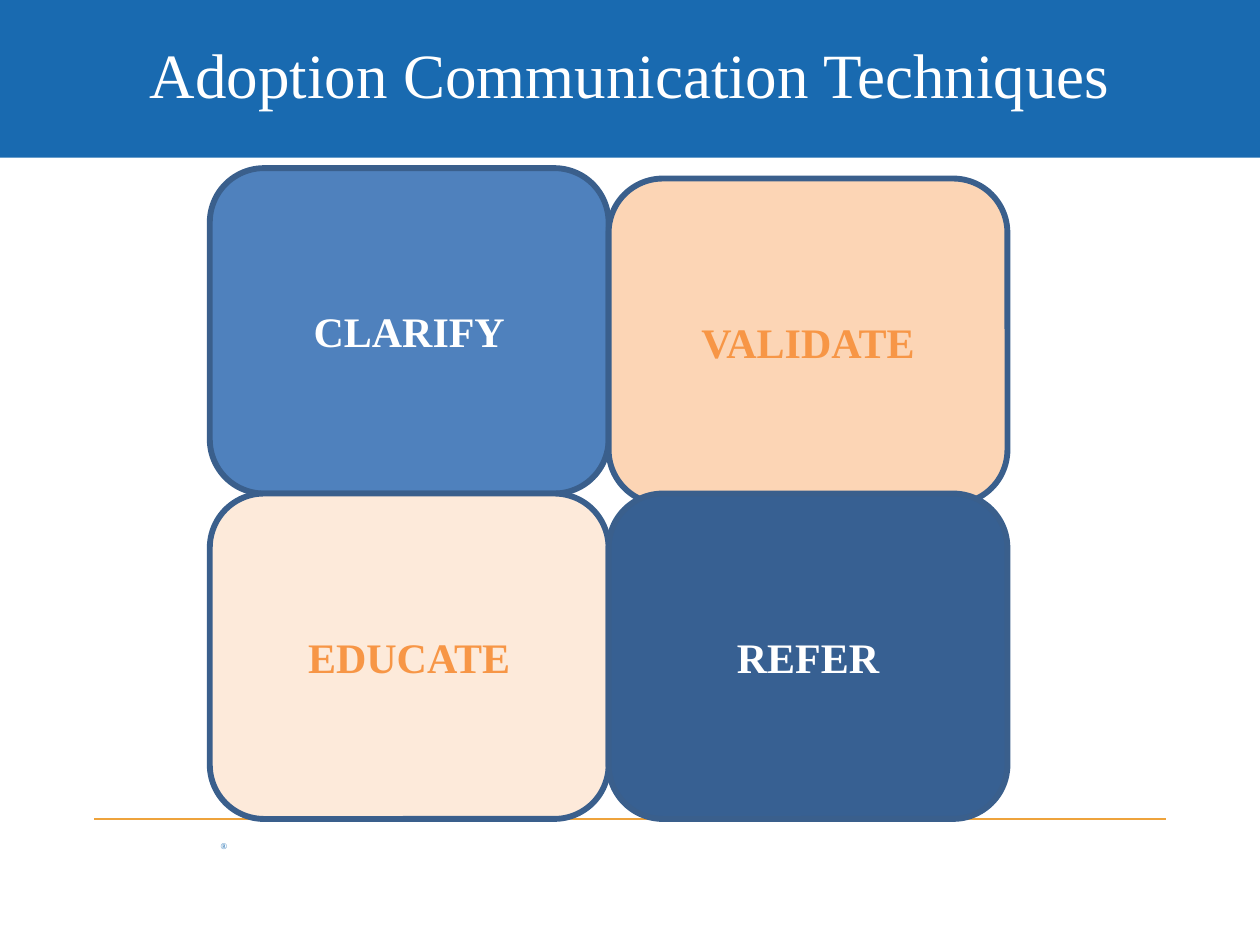
from dataclasses import dataclass

from lxml.etree import SubElement
from pptx import Presentation
from pptx.dml.color import RGBColor
from pptx.enum.shapes import MSO_CONNECTOR as Connector, MSO_SHAPE as Shape
from pptx.enum.text import MSO_ANCHOR as Anchor, MSO_AUTO_SIZE as AutoSize, PP_ALIGN as Align
from pptx.oxml.ns import qn
from pptx.slide import Slide
from pptx.text.text import TextFrame
from pptx.util import Cm, Pt


@dataclass(frozen=True)
class Theme:
    font: str = "Times New Roman"
    title_size: float = 36
    card_size: float = 24
    mark_size: float = 5
    card_border: float = 3.35
    rule_width: float = 0.75
    white: str = "FFFFFF"
    band: str = "196AB0"
    rule: str = "EEA33C"
    border: str = "3A5F8C"
    blue: str = "4F81BD"
    navy: str = "376092"
    peach: str = "FCD5B5"
    cream: str = "FDEADA"
    orange: str = "F79646"


@dataclass(frozen=True)
class Card:
    label: str
    left: float
    top: float
    fill: str
    text: str


THEME = Theme()
PAGE_WIDTH, PAGE_HEIGHT = 25.4, 19.05
BAND_HEIGHT = 3.18
CARD_WIDTH, CARD_HEIGHT = 8.04, 6.56
LEFT_COLUMN = 4.23
RIGHT_COLUMN = LEFT_COLUMN + CARD_WIDTH
LOWER_ROW = 9.95
RULE_MARGIN, RULE_TOP = 1.9, 16.51

CARDS = (
    Card("CLARIFY", LEFT_COLUMN, 3.39, THEME.blue, THEME.white),
    Card("VALIDATE", RIGHT_COLUMN, 3.6, THEME.peach, THEME.orange),
    Card("EDUCATE", LEFT_COLUMN, LOWER_ROW, THEME.cream, THEME.orange),
    Card("REFER", RIGHT_COLUMN, LOWER_ROW, THEME.navy, THEME.white),
)


def write(frame: TextFrame, text: str, size: float, color: str,
          bold: bool = False, align: Align = Align.CENTER) -> None:
    frame.text = text
    frame.word_wrap = True
    frame.vertical_anchor = Anchor.MIDDLE
    para = frame.paragraphs[0]
    para.alignment = align
    font = para.runs[0].font
    font.name, font.size, font.bold = THEME.font, Pt(size), bold
    font.color.rgb = RGBColor.from_string(color)


def draw_band(slide: Slide) -> None:
    band = slide.shapes.add_shape(Shape.RECTANGLE, 0, 0, Cm(PAGE_WIDTH), Cm(BAND_HEIGHT))
    band.shadow.inherit = False
    band.fill.solid()
    band.fill.fore_color.rgb = RGBColor.from_string(THEME.band)
    band.line.fill.background()


def draw_title(slide: Slide, text: str) -> None:
    """Fill the title placeholder and bring it in front of the band."""
    title = slide.shapes.title
    title.left, title.top, title.width, title.height = Cm(1.27), Cm(0.21), Cm(22.86), Cm(2.54)
    write(title.text_frame, text, THEME.title_size, THEME.white)
    title.text_frame.auto_size = AutoSize.NONE
    slide.shapes.element.append(title.element)


def draw_rule(slide: Slide) -> None:
    rule = slide.shapes.add_connector(Connector.STRAIGHT, Cm(RULE_MARGIN), Cm(RULE_TOP),
                                      Cm(PAGE_WIDTH - RULE_MARGIN), Cm(RULE_TOP))
    rule.line.color.rgb = RGBColor.from_string(THEME.rule)
    rule.line.width = Pt(THEME.rule_width)
    SubElement(rule.element.spPr, qn("a:effectLst"))


def draw_registered_mark(slide: Slide) -> None:
    box = slide.shapes.add_textbox(Cm(4.45), Cm(16.94), Cm(0.64), Cm(0.2))
    frame = box.text_frame
    frame.margin_left = frame.margin_top = frame.margin_right = frame.margin_bottom = 0
    write(frame, "®", THEME.mark_size, THEME.band, align=Align.LEFT)
    frame.vertical_anchor = Anchor.TOP


def draw_card(slide: Slide, card: Card) -> None:
    box = slide.shapes.add_shape(Shape.ROUNDED_RECTANGLE, Cm(card.left), Cm(card.top),
                                 Cm(CARD_WIDTH), Cm(CARD_HEIGHT))
    box.shadow.inherit = False
    box.fill.solid()
    box.fill.fore_color.rgb = RGBColor.from_string(card.fill)
    box.line.color.rgb = RGBColor.from_string(THEME.border)
    box.line.width = Pt(THEME.card_border)
    write(box.text_frame, card.label, THEME.card_size, card.text, bold=True)


def main() -> None:
    deck = Presentation()
    deck.slide_width, deck.slide_height = Cm(PAGE_WIDTH), Cm(PAGE_HEIGHT)
    slide = deck.slides.add_slide(deck.slide_layouts.get_by_name("Title Only"))
    draw_band(slide)
    draw_registered_mark(slide)
    draw_rule(slide)
    draw_title(slide, "Adoption Communication Techniques")
    for card in CARDS:
        draw_card(slide, card)
    deck.save("out.pptx")


if __name__ == "__main__":
    main()
